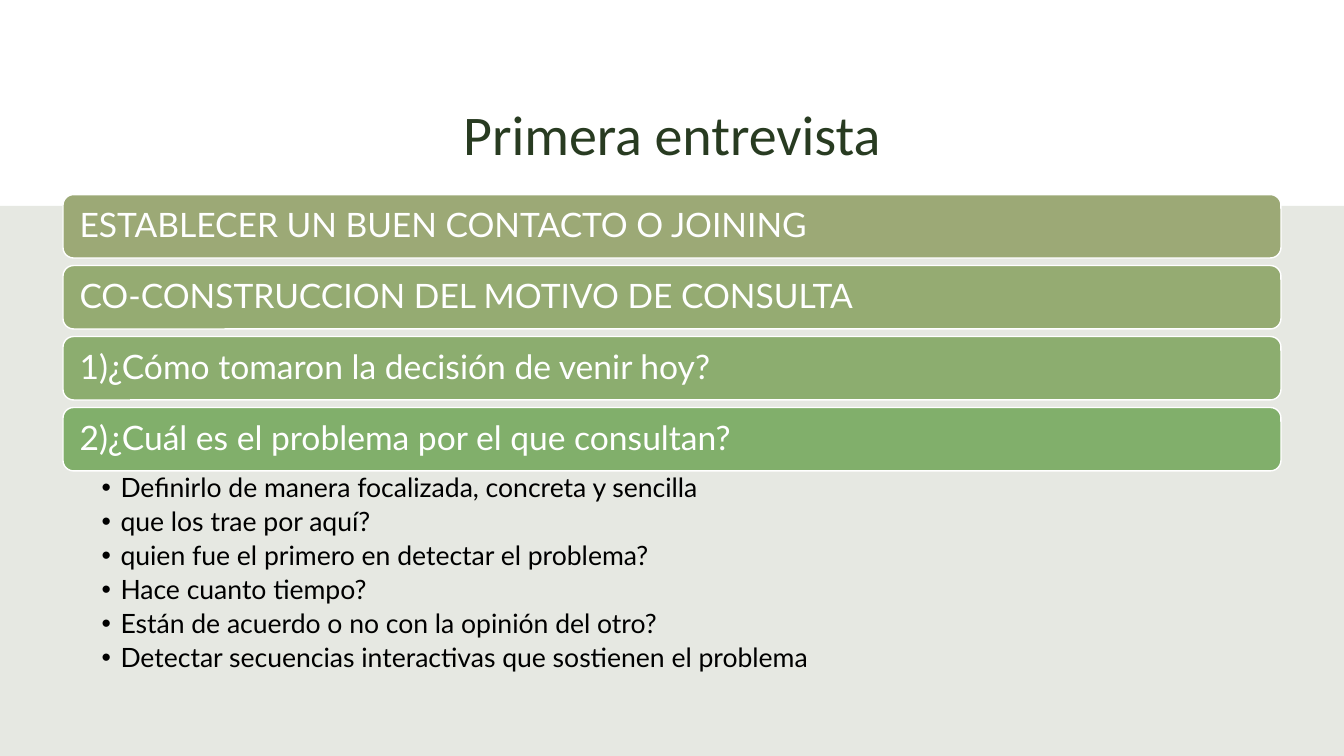
from lxml.etree import SubElement
from pptx import Presentation
from pptx.dml.color import RGBColor
from pptx.enum.shapes import MSO_SHAPE as Shape
from pptx.enum.text import MSO_ANCHOR as Anchor, PP_ALIGN as Align
from pptx.oxml.ns import qn
from pptx.util import Pt

WIDTH, HEIGHT = 960, 540
STEPS = [
    ("ESTABLECER UN BUEN CONTACTO O JOINING", "9CA976"),
    ("CO-CONSTRUCCION DEL MOTIVO DE CONSULTA", "95AB72"),
    ("1)¿Cómo tomaron la decisión de venir hoy?", "8CAD6F"),
    ("2)¿Cuál es el problema por el que consultan?", "81AF6B"),
]
QUESTIONS = [
    "Definirlo de manera focalizada, concreta y sencilla",
    "que los trae por aquí?",
    "quien fue el primero en detectar el problema?",
    "Hace cuanto tiempo?",
    "Están de acuerdo o no con la opinión del otro?",
    "Detectar secuencias interactivas que sostienen el problema",
]


def paint(target, color):
    target.solid()
    target.fore_color.rgb = RGBColor.from_string(color)


def add_box(slide, kind, box, color, outline=None):
    shape = slide.shapes.add_shape(kind, *map(Pt, box))
    shape.shadow.inherit = False
    paint(shape.fill, color)
    if outline:
        paint(shape.line.fill, outline)
        shape.line.width = Pt(1)
    else:
        shape.line.fill.background()
    return shape


def set_frame(shape, insets, anchor):
    frame = shape.text_frame
    frame.word_wrap = True
    frame.vertical_anchor = anchor
    frame.margin_left, frame.margin_top, frame.margin_right, frame.margin_bottom = map(Pt, insets)
    return frame


def write(paragraph, text, size, font, color, align=Align.LEFT):
    paragraph.alignment = align
    run = paragraph.add_run()
    run.text = text
    run.font.size = Pt(size)
    run.font.name = font
    paint(run.font.fill, color)


def add_title(slide, box, text):
    shape = slide.shapes.add_textbox(*map(Pt, box))
    frame = set_frame(shape, (7.2, 3.6, 7.2, 3.6), Anchor.MIDDLE)
    write(frame.paragraphs[0], text, 40, "Calibri", "283B21", Align.CENTER)


def add_steps(slide, box, steps):
    left, top, width, height = box
    gap = 5.4
    bar_height = (height - gap * (len(steps) - 1)) / len(steps)
    for index, (text, color) in enumerate(steps):
        bar_top = top + index * (bar_height + gap)
        bar = add_box(slide, Shape.ROUNDED_RECTANGLE, (left, bar_top, width, bar_height), color, "FFFFFF")
        frame = set_frame(bar, (9.6, 7.2, 9.6, 7.2), Anchor.MIDDLE)
        paragraph = frame.paragraphs[0]
        paragraph.line_spacing = 0.9
        write(paragraph, text, 24, "Lato", "FFFFFF")


def add_questions(slide, box, questions):
    shape = slide.shapes.add_textbox(*map(Pt, box))
    frame = set_frame(shape, (27.6, 2.4, 13.6, 2.4), Anchor.TOP)
    for index, text in enumerate(questions):
        paragraph = frame.add_paragraph() if index else frame.paragraphs[0]
        paragraph.line_spacing = 0.9
        paragraph.space_after = Pt(3.8)
        write(paragraph, text, 19, "Lato", "000000")
        properties = paragraph._p.get_or_add_pPr()
        properties.set("marL", str(Pt(13.5)))
        properties.set("indent", str(Pt(-13.5)))
        SubElement(properties, qn("a:buFont"), typeface="Arial")
        SubElement(properties, qn("a:buChar"), char="•")


def main():
    presentation = Presentation()
    presentation.slide_width = Pt(WIDTH)
    presentation.slide_height = Pt(HEIGHT)
    slide = presentation.slides.add_slide(presentation.slide_layouts[6])
    paint(slide.background.fill, "FFFFFF")
    panel_top = 147
    add_box(slide, Shape.RECTANGLE, (0, panel_top, WIDTH, HEIGHT - panel_top), "E6E8E2")
    add_title(slide, (112, 55.6, 736, 78.4), "Primera entrevista")
    left, width = 45, 870
    add_steps(slide, (left, 139, width, 197.4), STEPS)
    add_questions(slide, (left, 336.4, width, 152.6), QUESTIONS)
    presentation.save("out.pptx")


if __name__ == "__main__":
    main()
